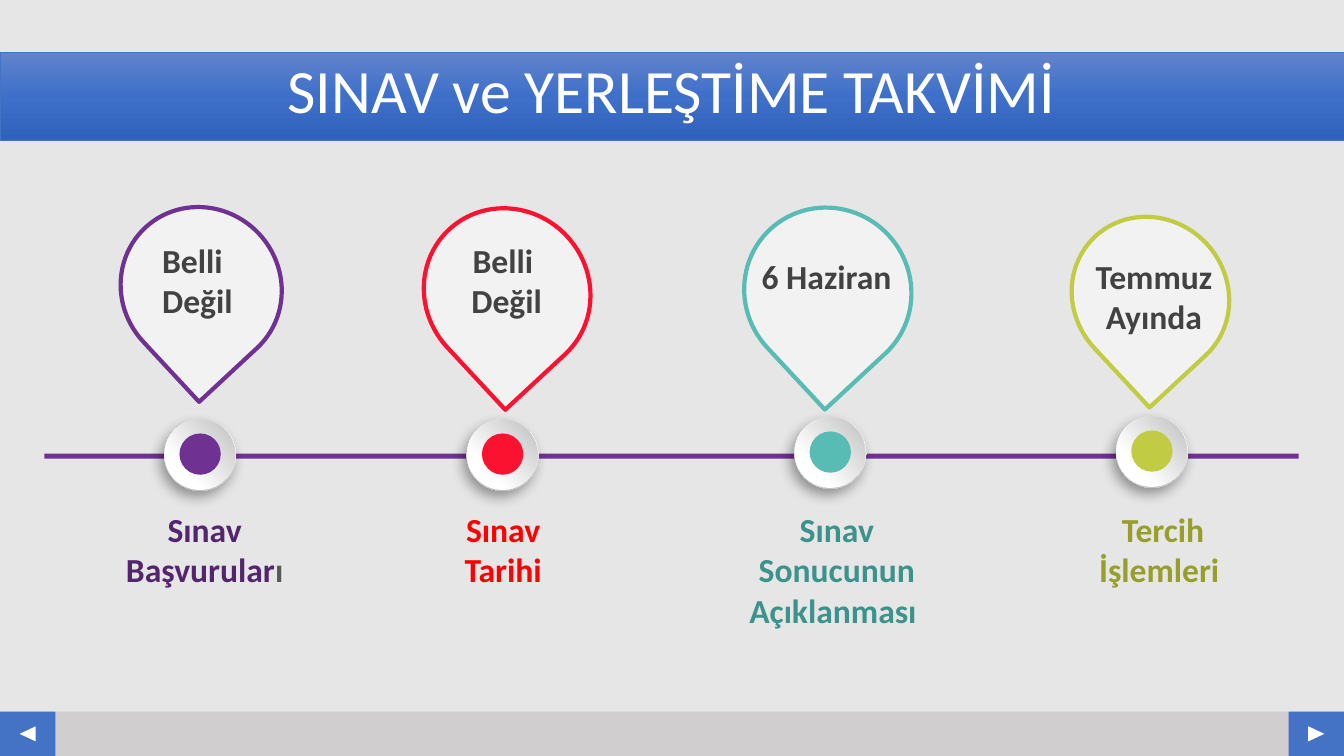
"""Builds the exam and placement calendar slide."""
import dataclasses

import lxml.etree
import pptx
import pptx.dml.color
import pptx.enum.shapes
import pptx.enum.text
import pptx.oxml.ns
import pptx.util

Inches = pptx.util.Inches
Pt = pptx.util.Pt
Kind = pptx.enum.shapes.MSO_SHAPE
Align = pptx.enum.text.PP_ALIGN
qn = pptx.oxml.ns.qn


@dataclasses.dataclass
class Theme:
    """Colours and type sizes of the slide."""
    font: str = "Calibri"
    head: int = 44
    body: int = 24
    back: str = "E7E6E6"
    foot: str = "D0CECE"
    blue: str = "4472C4"
    white: str = "FFFFFF"
    pin: str = "F2F2F2"
    ink: str = "424242"
    grey: str = "595959"
    plum: str = "6F3293"
    red: str = "FA1230"
    teal: str = "58BBB4"
    lime: str = "C2CB44"
    band: tuple = ((0, "6183CB"), (50, "3E70CA"), (100, "3062BB"))
    rim: tuple = ((17, "FFFFFF"), (88, "B8B8B8"))
    face: tuple = ((29, "FFFFFF"), (98, "BFBFBF"))


def rgb(code):
    """Return a colour object for a hex code."""
    return pptx.dml.color.RGBColor.from_string(code)


class Board:
    """Draws styled elements on one slide."""

    def __init__(self, slide, theme):
        """Keep the slide and theme and paint the background."""
        self.slide = slide
        self.theme = theme
        slide.background.fill.solid()
        slide.background.fill.fore_color.rgb = rgb(theme.back)

    def shape(self, kind, box, fill, line=None, width=1, turn=0):
        """Add a preset shape with a flat fill."""
        item = self.slide.shapes.add_shape(kind, *map(Inches, box))
        item.shadow.inherit = False
        item.rotation = turn
        item.fill.solid()
        item.fill.fore_color.rgb = rgb(fill)
        if line:
            item.line.color.rgb = rgb(line)
            item.line.width = Pt(width)
        else:
            item.line.fill.background()
        return item

    def blend(self, item, stops, angle):
        """Fill a shape with a linear gradient, angle clockwise."""
        item.fill.gradient()
        item.fill.gradient_angle = (360 - angle) % 360
        holder = next(item.element.spPr.iter(qn("a:gsLst")))
        for old in list(holder):
            holder.remove(old)
        for place, code in stops:
            stop = lxml.etree.SubElement(holder, qn("a:gs"), pos=str(place * 1000))
            lxml.etree.SubElement(stop, qn("a:srgbClr"), val=code)

    def shade(self, item):
        """Give a shape a soft shadow to the lower left."""
        holder = item.element.spPr.find(qn("a:effectLst"))
        cast = lxml.etree.SubElement(
            holder, qn("a:outerShdw"), blurRad=str(Pt(10)), dist=str(Pt(5)),
            dir=str(123 * 60000), algn="ctr", rotWithShape="0")
        tint = lxml.etree.SubElement(cast, qn("a:srgbClr"), val="000000")
        lxml.etree.SubElement(tint, qn("a:alpha"), val="39000")

    def style(self, run, size, code, bold):
        """Format one run."""
        run.font.name = self.theme.font
        run.font.size = Pt(size)
        run.font.bold = bold
        run.font.color.rgb = rgb(code)

    def text(self, box, words, code, align=Align.CENTER, wrap=True):
        """Add a bold text box and return its frame."""
        frame = self.slide.shapes.add_textbox(*map(Inches, box)).text_frame
        frame.word_wrap = wrap
        frame.text = words
        for para in frame.paragraphs:
            para.alignment = align
            for run in para.runs:
                self.style(run, self.theme.body, code, True)
        return frame

    def title(self, words):
        """Add the heading band."""
        band = self.shape(Kind.RECTANGLE, (0, 0.52, 13.33, 0.87),
                          self.theme.blue, self.theme.blue, 0.5)
        self.blend(band, self.theme.band, 90)
        frame = band.text_frame
        frame.margin_bottom = Inches(0.1)
        frame.vertical_anchor = pptx.enum.text.MSO_ANCHOR.MIDDLE
        frame.text = words
        para = frame.paragraphs[0]
        para.alignment = Align.CENTER
        para.line_spacing = 0.9
        self.style(para.runs[0], self.theme.head, self.theme.white, False)

    def footer(self):
        """Add the bottom bar with its two arrow keys."""
        top, high, wide = 7.06, 0.44, 0.55
        self.shape(Kind.RECTANGLE, (0, top, 13.33, high), self.theme.foot)
        for left, turn in ((0, 270), (12.78, 90)):
            self.shape(Kind.RECTANGLE, (left, top, wide, high), self.theme.blue)
            self.shape(Kind.ISOSCELES_TRIANGLE, (left + 0.2, 7.2, 0.15, 0.16),
                       self.theme.white, turn=turn)

    def knob(self, left, top, code):
        """Add a raised disc with a coloured dot."""
        rim = self.shape(Kind.OVAL, (left, top, 0.71, 0.71), self.theme.white, turn=62.3)
        self.blend(rim, self.theme.rim, 45)
        self.shade(rim)
        face = self.shape(Kind.OVAL, (left, top, 0.7, 0.7), self.theme.white, turn=273)
        self.blend(face, self.theme.face, 45)
        self.shape(Kind.OVAL, (left + 0.15, top + 0.14, 0.41, 0.41), code)

    def pin(self, box, code):
        """Add a drop-shaped marker pointing down."""
        self.shape(Kind.TEAR, box, self.theme.pin, code, 3, 137.1)


def main():
    """Build and save the slide."""
    deck = pptx.Presentation()
    deck.slide_width, deck.slide_height = Inches(13.33), Inches(7.5)
    theme = Theme()
    board = Board(deck.slides.add_slide(deck.slide_layouts[6]), theme)
    board.footer()
    board.title("SINAV ve YERLEŞTİME TAKVİMİ")
    board.shape(Kind.RECTANGLE, (0.44, 4.5, 12.44, 0.05), theme.plum)

    knobs = ((1.63, 4.16), (4.63, 4.16), (7.88, 4.14), (11.07, 4.13))
    pins = ((1.21, 2.04, 1.57, 1.63), (4.22, 2.05, 1.62, 1.69),
            (7.39, 2.05, 1.64, 1.68), (10.65, 2.13, 1.52, 1.61))
    hues = (theme.plum, theme.red, theme.teal, theme.lime)
    for spot, box, hue in zip(knobs, pins, hues):
        board.knob(*spot, hue)
        board.pin(box, hue)

    dates = (((1.51, 2.33, 0.91, 0.91), "Belli\nDeğil", Align.LEFT),
             ((4.57, 2.33, 0.91, 0.91), "Belli \nDeğil", Align.CENTER),
             ((7.37, 2.49, 1.58, 0.5), " 6 Haziran", Align.CENTER),
             ((10.76, 2.49, 1.37, 0.91), "Temmuz\nAyında", Align.CENTER))
    for box, words, align in dates:
        board.text(box, words, theme.ink, align, False)

    steps = ((1.08, 1.9, 0.91, "Sınav Başvurular", "53256E"),
             (4.15, 1.68, 0.91, "Sınav Tarihi", "FF0000"),
             (7.22, 2.16, 1.31, "Sınav Sonucunun Açıklanması ", "3C938C"),
             (10.76, 1.55, 0.91, "Tercih İşlemleri ", "979F2C"))
    frames = [board.text((left, 5, wide, high), words, code)
              for left, wide, high, words, code in steps]
    tail = frames[0].paragraphs[0].add_run()
    tail.text = "ı"
    board.style(tail, theme.body, theme.grey, True)
    deck.save("out.pptx")


if __name__ == "__main__":
    main()
